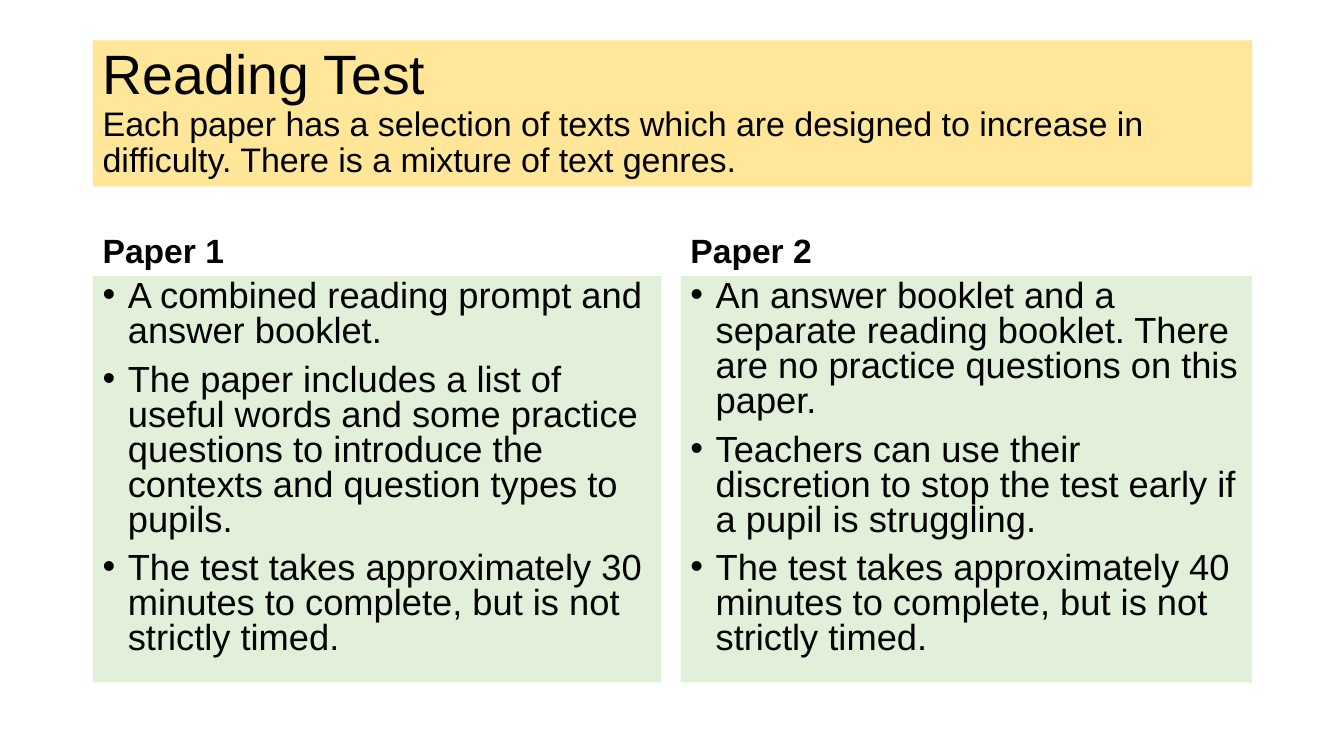
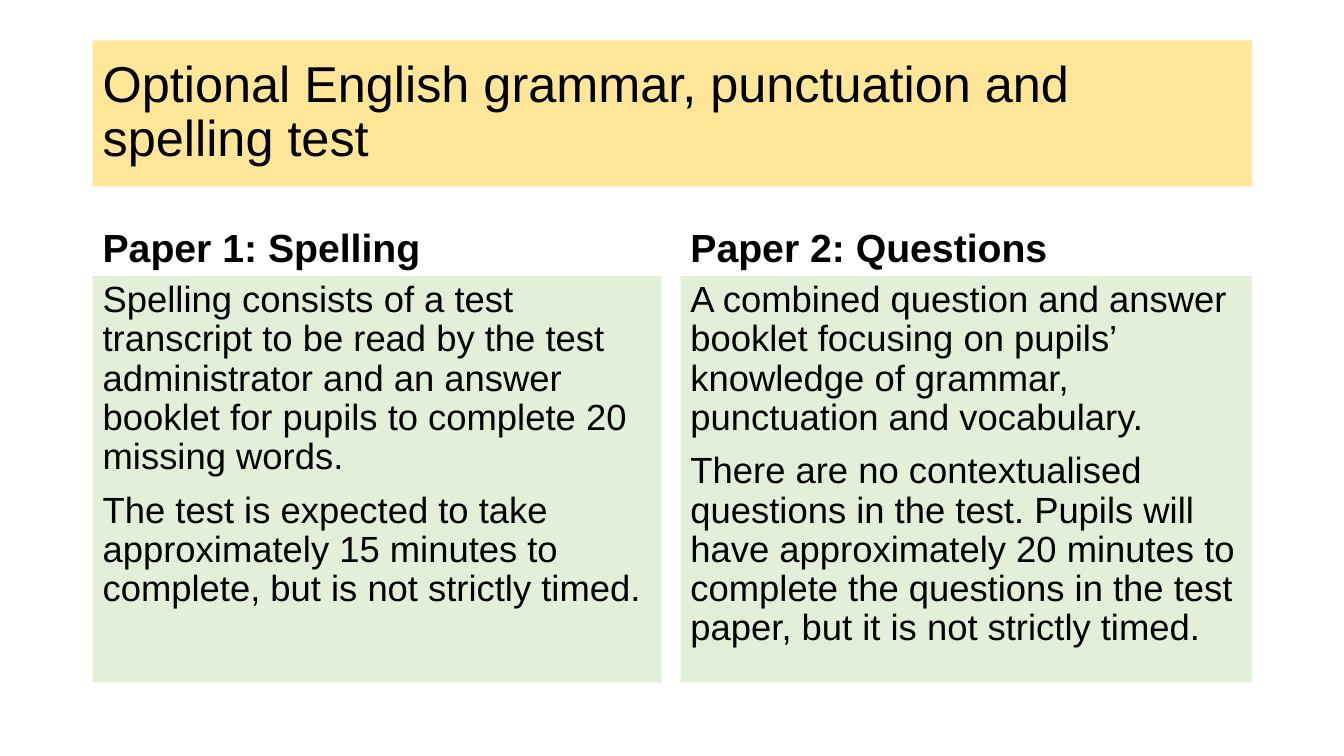
from dataclasses import dataclass
from typing import Optional

from lxml import etree
from pptx import Presentation
from pptx import util as u
from pptx.dml.color import RGBColor
from pptx.enum import shapes, text
from pptx.oxml import ns


@dataclass(frozen=True)
class Theme:
    font: str = "Arial"
    ink: str = "000000"
    title_band: str = "FFE699"
    panel: str = "E2F0D9"
    line_spacing: float = 0.9
    space_before: float = 10
    indent: float = 0.25


@dataclass(frozen=True)
class Box:
    left: float
    top: float
    width: float
    height: float


@dataclass(frozen=True)
class Style:
    size: float
    bold: bool = False
    fill: Optional[str] = None
    anchor: text.MSO_ANCHOR = text.MSO_ANCHOR.TOP
    line_spacing: float = 0.9
    space_before: float = 0
    bulleted: bool = False


@dataclass(frozen=True)
class Line:
    words: str
    size: float


@dataclass(frozen=True)
class Column:
    heading: str
    paragraphs: tuple[str, ...]


@dataclass(frozen=True)
class TestSlide:
    title: tuple[Line, ...]
    columns: tuple[Column, Column]
    heading_size: float
    body_size: float
    body_spacing: float
    bulleted: bool


THEME = Theme()
SLIDE_WIDTH, SLIDE_HEIGHT = 13.33, 7.5
MARGIN, CONTENT_WIDTH = 0.92, 11.5
COLUMN_SPANS = ((MARGIN, 5.64), (6.75, 5.67))
TITLE_TOP, HEADING_TOP, PANEL_TOP, PANEL_BOTTOM = 0.4, 1.84, 2.74, 6.77

TEST_SLIDES = (
    TestSlide(
        title=(
            Line("Reading Test", 39.6),
            Line("Each paper has a selection of texts which are designed to increase in "
                 "difficulty. There is a mixture of text genres.", 24.3),
        ),
        columns=(
            Column("Paper 1", (
                "A combined reading prompt and answer booklet.",
                "The paper includes a list of useful words and some practice questions "
                "to introduce the contexts and question types to pupils.",
                "The test takes approximately 30 minutes to complete, but is not strictly timed.",
            )),
            Column("Paper 2", (
                "An answer booklet and a separate reading booklet. There are no practice "
                "questions on this paper.",
                "Teachers can use their discretion to stop the test early if a pupil is struggling.",
                "The test takes approximately 40 minutes to complete, but is not strictly timed.",
            )),
        ),
        heading_size=24, body_size=25.9, body_spacing=0.8, bulleted=True,
    ),
    TestSlide(
        title=(Line("Optional English grammar, punctuation and spelling test", 36),),
        columns=(
            Column("Paper 1: Spelling", (
                "Spelling consists of a test transcript to be read by the test administrator "
                "and an answer booklet for pupils to complete 20 missing words.",
                "The test is expected to take approximately 15 minutes to complete, but is not "
                "strictly timed.",
            )),
            Column("Paper 2: Questions", (
                "A combined question and answer booklet focusing on pupils’ knowledge of "
                "grammar, punctuation and vocabulary.",
                "There are no contextualised questions in the test. Pupils will have "
                "approximately 20 minutes to complete the questions in the test paper, but it "
                "is not strictly timed.",
            )),
        ),
        heading_size=28, body_size=26, body_spacing=THEME.line_spacing, bulleted=False,
    ),
)


def apply_format(target: object, values: dict) -> None:
    for name, value in values.items():
        setattr(target, name, value)


def add_bullet(paragraph) -> None:
    properties = paragraph._p.get_or_add_pPr()
    properties.set("marL", str(u.Inches(THEME.indent)))
    properties.set("indent", str(-u.Inches(THEME.indent)))
    etree.SubElement(properties, ns.qn("a:buFont")).set("typeface", THEME.font)
    etree.SubElement(properties, ns.qn("a:buChar")).set("char", "•")


def add_run(paragraph, line: Line, bold: bool) -> None:
    run = paragraph.add_run()
    run.text = line.words
    apply_format(run.font, {"name": THEME.font, "size": u.Pt(line.size), "bold": bold})
    run.font.color.rgb = RGBColor.from_string(THEME.ink)


def add_box(slide, box: Box, style: Style):
    place = [u.Inches(length) for length in (box.left, box.top, box.width, box.height)]
    if style.fill:
        shape = slide.shapes.add_shape(shapes.MSO_SHAPE.RECTANGLE, *place)
        shape.shadow.inherit = False
        shape.fill.solid()
        shape.fill.fore_color.rgb = RGBColor.from_string(style.fill)
        shape.line.fill.background()
    else:
        shape = slide.shapes.add_textbox(*place)
    apply_format(shape.text_frame, {
        "word_wrap": True,
        "auto_size": text.MSO_AUTO_SIZE.NONE,
        "vertical_anchor": style.anchor,
    })
    return shape.text_frame


def add_text(slide, box: Box, style: Style, paragraphs: tuple[tuple[Line, ...], ...]) -> None:
    frame = add_box(slide, box, style)
    for index, lines in enumerate(paragraphs):
        paragraph = frame.add_paragraph() if index else frame.paragraphs[0]
        apply_format(paragraph, {
            "alignment": text.PP_ALIGN.LEFT,
            "line_spacing": style.line_spacing,
            "space_before": u.Pt(style.space_before),
        })
        if style.bulleted:
            add_bullet(paragraph)
        for position, line in enumerate(lines):
            if position:
                paragraph.add_line_break()
            add_run(paragraph, line, style.bold)


def add_title(slide, lines: tuple[Line, ...]) -> None:
    band = Box(MARGIN, TITLE_TOP, CONTENT_WIDTH, 1.45)
    style = Style(lines[0].size, fill=THEME.title_band, anchor=text.MSO_ANCHOR.MIDDLE)
    add_text(slide, band, style, (lines,))


def add_column(slide, span: tuple[float, float], column: Column, content: TestSlide) -> None:
    left, width = span
    heading = Style(content.heading_size, bold=True, anchor=text.MSO_ANCHOR.BOTTOM,
                    space_before=THEME.space_before)
    body = Style(content.body_size, fill=THEME.panel, line_spacing=content.body_spacing,
                 space_before=THEME.space_before, bulleted=content.bulleted)
    parts = (
        (HEADING_TOP, PANEL_TOP, heading, (column.heading,)),
        (PANEL_TOP, PANEL_BOTTOM, body, column.paragraphs),
    )
    for top, bottom, style, paragraphs in parts:
        lines = tuple((Line(words, style.size),) for words in paragraphs)
        add_text(slide, Box(left, top, width, bottom - top), style, lines)


def main() -> None:
    presentation = Presentation()
    apply_format(presentation, {
        "slide_width": u.Inches(SLIDE_WIDTH),
        "slide_height": u.Inches(SLIDE_HEIGHT),
    })
    for content in TEST_SLIDES:
        slide = presentation.slides.add_slide(presentation.slide_layouts[6])
        add_title(slide, content.title)
        for span, column in zip(COLUMN_SPANS, content.columns):
            add_column(slide, span, column, content)
    presentation.save("out.pptx")


if __name__ == "__main__":
    main()
